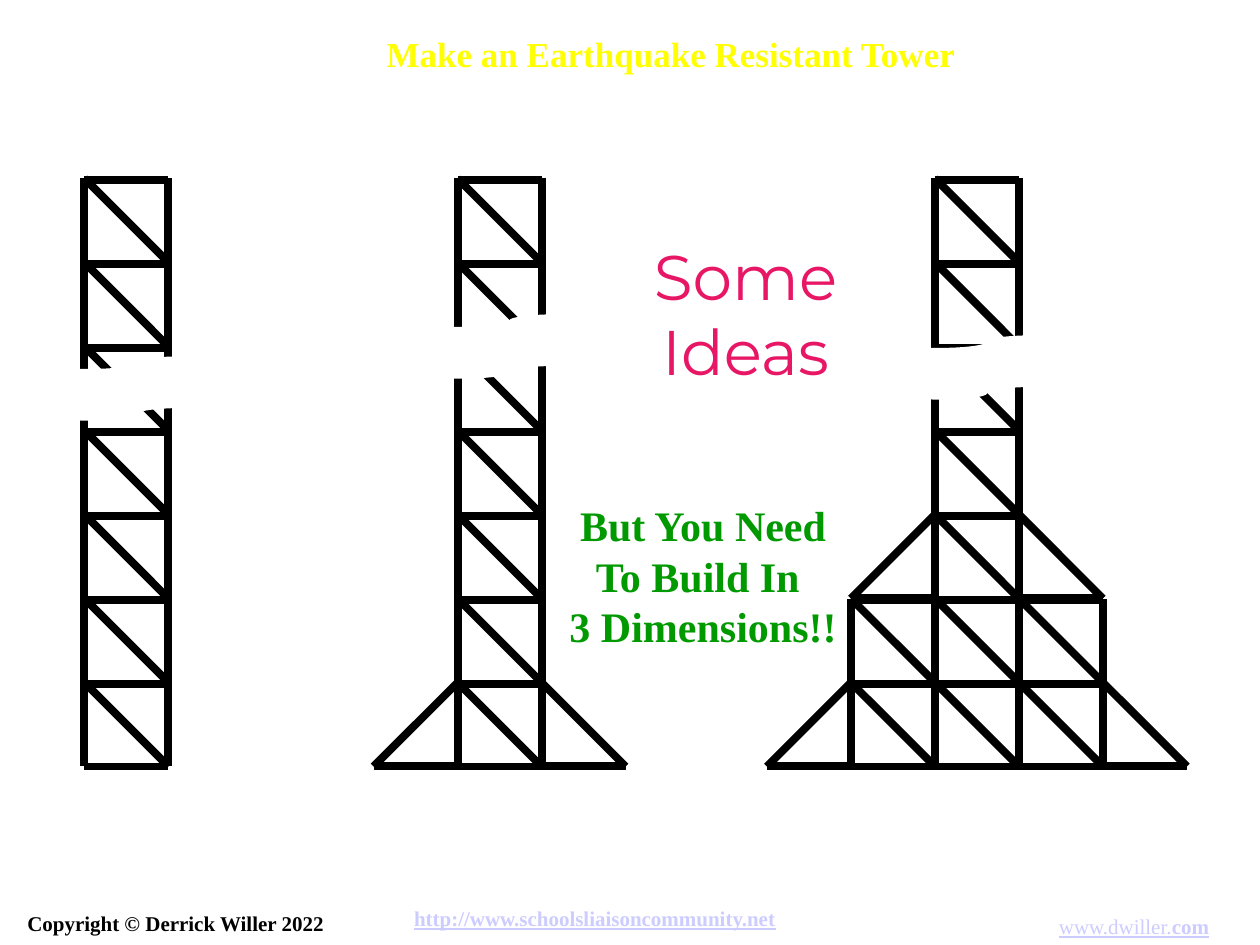
from pptx import Presentation
from pptx.dml.color import RGBColor
from pptx.enum.shapes import MSO_CONNECTOR, MSO_SHAPE
from pptx.enum.text import MSO_ANCHOR, MSO_AUTO_SIZE, PP_ALIGN
from pptx.oxml.ns import qn
from pptx.util import Pt
from lxml import etree


def color(code):
    return RGBColor.from_string(code)


def line(group, *ends):
    bar = group.shapes.add_connector(MSO_CONNECTOR.STRAIGHT, *[Pt(end) for end in ends])
    bar.line.color.rgb = color("000000")
    bar.line.width = Pt(4.5)
    etree.SubElement(bar._element.spPr, qn("a:effectLst"))


deck = Presentation()
deck.slide_width, deck.slide_height = Pt(720), Pt(540)
slide = deck.slides.add_slide(deck.slide_layouts[5])

CELL, TOP, ROWS = 48, 102, 7
BASE = TOP + ROWS * CELL
towers = [
    (48.25, [0] * 7, [], (24, 204)),
    (261.5, [0] * 7, [6], (237, 180)),
    (534.25, [0] * 5 + [1] * 2, [4, 6], (510, 192)),
]
for left, sides, wings, tape in towers:
    group = slide.shapes.add_group_shape()
    for row, side in enumerate(sides):
        y = TOP + row * CELL
        low = y + CELL
        start = left - side * CELL
        end = left + (side + 1) * CELL
        line(group, start, y, start, low)
        for col in range(2 * side + 1):
            x = start + col * CELL
            line(group, x + CELL, y, x + CELL, low)
            line(group, x, y + 1, x + CELL, y + 1)
            line(group, x, y, x + CELL, low)
            if low == BASE:
                line(group, x, low, x + CELL, low)
        if row in wings:
            for edge, foot in ((start, start - CELL), (end, end + CELL)):
                line(group, foot, low - 0.5, edge, low - 0.5)
                line(group, foot, low, edge, y)
    gap = group.shapes.add_shape(MSO_SHAPE.FLOWCHART_PUNCHED_TAPE, Pt(tape[0]), Pt(tape[1]), Pt(108), Pt(36))
    gap.shadow.inherit = False
    gap.fill.solid()
    gap.fill.fore_color.rgb = color("FFFFFF")
    gap.line.color.rgb = color("FFFFFF")
    gap.line.width = Pt(0.75)

SERIF = "Times New Roman"
title = slide.shapes.title
texts = [
    (title, (212.5, 15, 342, 31.5), SERIF, 20, "FFFF00", PP_ALIGN.CENTER,
     [[("Make an Earthquake Resistant Tower", True, False)]]),
    (None, (342, 132, 168, 132), "Montserrat", 36, "E81766", PP_ALIGN.CENTER,
     [[("Some", False, False)], [("Ideas", False, False)]]),
    (None, (318.25, 282, 167, 93.5), SERIF, 24, "009900", PP_ALIGN.CENTER,
     [[("But You Need", True, False)], [("To Build In ", True, False)], [("3 Dimensions!!", True, False)]]),
    (None, (229.5, 514, 334, 21.5), SERIF, 12, "CCCCFF", PP_ALIGN.LEFT,
     [[("http://www.schoolsliaisoncommunity.net", True, True)]]),
    (None, (8.5, 517, 186.5, 21.5), SERIF, 12, "000000", PP_ALIGN.LEFT,
     [[("Copyright © Derrick Willer 2022", True, False)]]),
    (None, (598, 518.5, 103.5, 21.5), SERIF, 12, "CCCCFF", PP_ALIGN.LEFT,
     [[("www.dwiller.", False, True), ("com", True, True)]]),
]
for box, spot, face, size, ink, align, lines in texts:
    place = [Pt(v) for v in spot]
    if box is None:
        box = slide.shapes.add_textbox(*place)
    box.left, box.top, box.width, box.height = place
    frame = box.text_frame
    frame.word_wrap = False
    frame.auto_size = MSO_AUTO_SIZE.NONE
    frame.vertical_anchor = MSO_ANCHOR.MIDDLE if size == 24 else MSO_ANCHOR.TOP
    for i, parts in enumerate(lines):
        para = frame.add_paragraph() if i else frame.paragraphs[0]
        para.alignment = align
        if size == 24:
            para.line_spacing = Pt(28.8)
        for words, bold, under in parts:
            run = para.add_run()
            run.text = words
            font = run.font
            font.name, font.size = face, Pt(size)
            font.bold, font.underline = bold, under
            font.color.rgb = color(ink)

deck.save("out.pptx")
